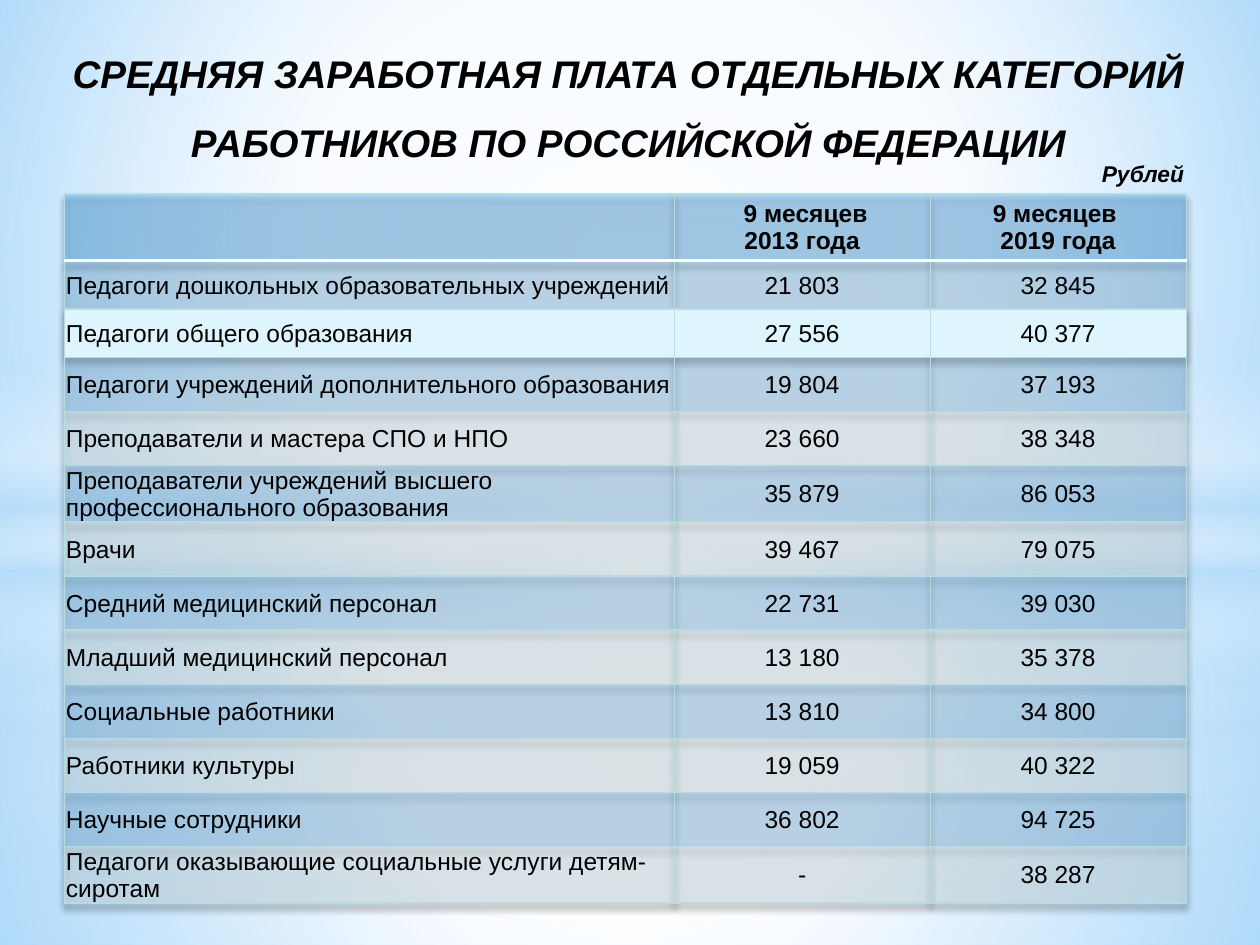
import pptx
import pptx.util
import pptx.dml.color
import pptx.enum.shapes
import pptx.enum.text
import pptx.oxml
import pptx.oxml.ns

Cm, Pt = pptx.util.Cm, pptx.util.Pt
qn = pptx.oxml.ns.qn
KIND = pptx.enum.shapes.MSO_SHAPE
ALIGN = pptx.enum.text.PP_ALIGN
MID = pptx.enum.text.MSO_ANCHOR.MIDDLE

HUE = {
    "text": "000000", "white": "FFFFFF", "haze": "B4DCFA",
    "sky": "9ED5FF", "deep": "5BB9FF", "rule": "B6DCDF",
    "head": "4FADF3", "odd": "8CC9F7", "even": "DFF5FD",
}

HEAD = ["", " 9 месяцев\v2013 года", "9 месяцев \v2019 года"]
ROWS = [
    ["Педагоги дошкольных образовательных учреждений", "21 803", "32 845"],
    ["Педагоги общего образования", "27 556", "40 377"],
    ["Педагоги учреждений дополнительного образования", "19 804", "37 193"],
    ["Преподаватели и мастера СПО и НПО", "23 660", "38 348"],
    ["Преподаватели учреждений высшего профессионального образования",
     "35 879", "86 053"],
    ["Врачи", "39 467", "79 075"],
    ["Средний медицинский персонал", "22 731", "39 030"],
    ["Младший медицинский персонал", "13 180", "35 378"],
    ["Социальные работники", "13 810", "34 800"],
    ["Работники культуры", "19 059", "40 322"],
    ["Научные сотрудники", "36 802", "94 725"],
    ["Педагоги оказывающие социальные услуги детям-сиротам", "-", "38 287"],
]
HIGH = [1.35, 0.97, 0.97, 1.09, 1.09, 1.14] + [1.09] * 6 + [1.14]
WIDE = [12.29, 5.16, 5.16]


def node(xml):
    """Parse an XML fragment that uses the a: prefix."""
    head, tail = xml.split(" ", 1)
    return pptx.oxml.parse_xml(f"{head} {pptx.oxml.ns.nsdecls('a')} {tail}")


def blend(fill, root, stops, ends=None):
    """Fill with (place, colour, opacity) stops: round if ends, else downward."""
    fill.gradient()
    old = next(root.iter(qn("a:gradFill")))
    marks = "".join(
        f'<a:gs pos="{at * 1000}"><a:srgbClr val="{HUE[hue]}">'
        f'<a:alpha val="{pct * 1000}"/></a:srgbClr></a:gs>'
        for at, hue, pct in stops)
    if ends:
        sides = " ".join(f'{s}="{v * 1000}"' for s, v in zip("ltrb", ends))
        way = f'<a:path path="circle"><a:fillToRect {sides}/></a:path>'
    else:
        way = '<a:lin ang="5400000" scaled="0"/>'
    new = node(f'<a:gradFill rotWithShape="1"><a:gsLst>{marks}</a:gsLst>'
               f'{way}</a:gradFill>')
    old.getparent().replace(old, new)


class Deck:
    font = "Arial"

    def __init__(self):
        self.file = pptx.Presentation()
        self.file.slide_width, self.file.slide_height = Cm(25.4), Cm(19.05)
        self.slide = self.file.slides.add_slide(self.file.slide_layouts[5])

    def style(self, para, size, bold=False, slant=False, align=ALIGN.CENTER):
        para.alignment = align
        for run in para.runs:
            font = run.font
            font.name, font.size = self.font, Pt(size)
            font.bold, font.italic = bold, slant
            font.color.rgb = pptx.dml.color.RGBColor.from_string(HUE["text"])

    def back(self):
        stops = [(0, "sky", 100), (60, "white", 100), (100, "deep", 100)]
        blend(self.slide.background.fill, self.slide.element, stops,
              (20, 10, 20, 60))

    def glow(self, kind, top, high, stops, ends=None):
        """Add a full-width shape with a soft gradient."""
        shape = self.slide.shapes.add_shape(
            kind, 0, Cm(top), self.file.slide_width, Cm(high))
        shape.shadow.inherit = False
        shape.line.fill.background()
        blend(shape.fill, shape.element, stops, ends)

    def scene(self, split, band, fade, clear):
        """Add sky, ground, horizon and halo; split is the horizon height."""
        mid = (50, 50, 50, 50)
        self.glow(KIND.RECTANGLE, split, 19.05 - split,
                  [(0, "white", clear + 2), (37, "white", clear - 13),
                   (100, "haze", clear - 10)], mid)
        self.glow(KIND.RECTANGLE, 0, split,
                  [(0, "white", clear), (48, "white", clear - 27),
                   (100, "haze", clear - 10)], mid)
        self.glow(KIND.RECTANGLE, band, 6.35,
                  [(0, "white", 0), (29, "white", 30), (45, "haze", 40),
                   (55, "white", 26), (65, "haze", 60), (100, "white", 0)])
        self.glow(KIND.OVAL, 4.45, 14.17,
                  [(0, "white", 100), (fade, "white", 0)], mid)

    def title(self, text):
        box = self.slide.shapes.title
        box.left, box.top = Cm(0.5), Cm(0.33)
        box.width, box.height = Cm(24.33), Cm(3.2)
        frame = box.text_frame
        frame.text = text
        frame.vertical_anchor = MID
        frame.auto_size = pptx.enum.text.MSO_AUTO_SIZE.NONE
        frame.paragraphs[0].line_spacing = 1.5
        self.style(frame.paragraphs[0], 22, bold=True, slant=True)
        box.element.getparent().append(box.element)  # in front of the scene

    def label(self, text, left, top, wide, high):
        box = self.slide.shapes.add_textbox(
            Cm(left), Cm(top), Cm(wide), Cm(high))
        box.text_frame.text = text
        box.text_frame.word_wrap = False
        self.style(box.text_frame.paragraphs[0], 13, bold=True, slant=True)

    def cell(self, cell, text, row, col):
        top = row == 0
        cell.text = text
        cell.vertical_anchor = MID
        cell.margin_left = cell.margin_right = Cm(0.18 if top else 0.03)
        cell.margin_top, cell.margin_bottom = Cm(0 if top else 0.03), 0
        self.style(cell.text_frame.paragraphs[0], 14, bold=top,
                   align=ALIGN.CENTER if top or col else ALIGN.LEFT)

        hue = "head" if top else "odd" if row % 2 else "even"
        cell.fill.solid()
        cell.fill.fore_color.rgb = pptx.dml.color.RGBColor.from_string(HUE[hue])
        prop = cell.fill and cell.text_frame._txBody.getparent().tcPr
        if row != 2:  # the second row is opaque
            tint = next(prop.iter(qn("a:srgbClr")))
            tint.append(node('<a:alpha val="40000"/>'))
        for spot, side in enumerate("LRTB"):
            thick = (side, row) in (("B", 0), ("T", 1))
            ink, size = ("white", 2) if thick else ("rule", 0.75)
            prop.insert(spot, node(
                f'<a:ln{side} w="{Pt(size)}"><a:solidFill>'
                f'<a:srgbClr val="{HUE[ink]}"/></a:solidFill></a:ln{side}>'))

    def table(self, rows, left, top, wide, high):
        grid = self.slide.shapes.add_table(
            len(rows), len(wide), Cm(left), Cm(top),
            Cm(sum(wide)), Cm(sum(high))).table
        for col, size in zip(grid.columns, wide):
            col.width = Cm(size)
        for row, size in zip(grid.rows, high):
            row.height = Cm(size)
        for r, texts in enumerate(rows):
            for c, text in enumerate(texts):
                self.cell(grid.cell(r, c), text, r, c)
        grid._tbl.tblPr.insert(0, node(
            '<a:effectLst ><a:outerShdw blurRad="50800" dist="38100" '
            'dir="5400000"><a:srgbClr val="000000"><a:alpha val="40000"/>'
            '</a:srgbClr></a:outerShdw></a:effectLst>'.replace(" >", " >", 1)))


def main():
    deck = Deck()
    deck.back()
    deck.scene(14.17, 10.46, 56, 89)
    deck.scene(10.74, 7.37, 54, 90)
    deck.title("СРЕДНЯЯ ЗАРАБОТНАЯ ПЛАТА ОТДЕЛЬНЫХ КАТЕГОРИЙ "
               "РАБОТНИКОВ ПО РОССИЙСКОЙ ФЕДЕРАЦИИ")
    deck.table([HEAD] + ROWS, 1.3, 3.91, WIDE, HIGH)
    deck.label("Рублей", 21.95, 3.1, 2.18, 0.81)
    deck.file.save("out.pptx")


if __name__ == "__main__":
    main()
